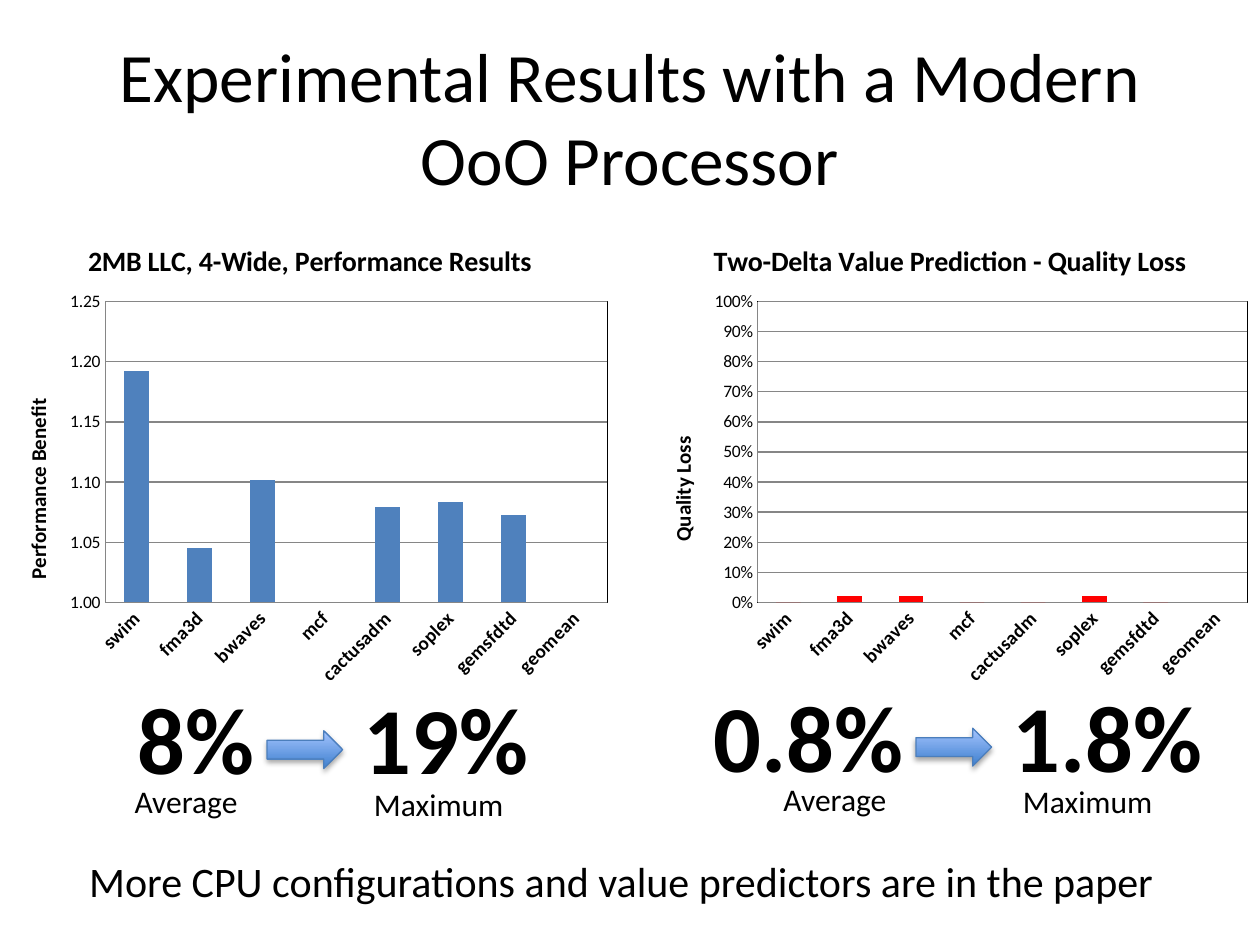
from lxml import etree
from pptx import Presentation
from pptx.chart import data
from pptx.dml.color import RGBColor
from pptx.enum import chart as ch, shapes, text
from pptx.oxml import ns, parse_xml
from pptx.util import Inches, Pt

FONT = "Calibri"
HUES = {"ink": "000000", "blue": "4F81BD", "red": "FF0000", "grid": "868686",
        "deep": "3F80CE", "pale": "A4C4FF", "edge": "4B7EBC"}
CATS = ["swim", "fma3d", "bwaves", "mcf", "cactusadm", "soplex", "gemsfdtd", "geomean"]
GAINS = [1.192, 1.045, 1.102, 1, 1.079, 1.083, 1.073, None]
LOSSES = [0, 0.02, 0.02, 0, 0, 0.02, 0, None]


def hue(name):
    """Return the named colour."""
    return RGBColor.from_string(HUES[name])


def style(font, size, bold=False):
    """Set face, size, weight and ink of a font."""
    font.name, font.size, font.bold = FONT, Pt(size), bold
    font.color.rgb = hue("ink")


def place(shape, *box):
    """Move and size a shape in inches."""
    shape.left, shape.top, shape.width, shape.height = map(Inches, box)


def add_text(home, words, box, size, bold=False, align=text.PP_ALIGN.LEFT, wrap=False):
    """Add a one-paragraph text box."""
    frame = home.add_textbox(*map(Inches, box)).text_frame
    frame.word_wrap = wrap
    para = frame.paragraphs[0]
    para.text, para.alignment = words, align
    style(para.font, size, bold)


def add_arrow(home, left, top):
    """Add a shaded right arrow with a soft shadow."""
    arrow = home.add_shape(shapes.MSO_SHAPE.RIGHT_ARROW, *map(Inches, (left, top, 0.6, 0.3)))
    arrow.fill.gradient()
    arrow.fill.gradient_angle = 90
    for stop, name, spot in zip(arrow.fill.gradient_stops, ("deep", "pale"), (0, 1)):
        stop.color.rgb, stop.position = hue(name), spot
    arrow.line.color.rgb, arrow.line.width = hue("edge"), Pt(0.75)
    arrow.shadow.inherit = False
    glow = arrow.element.spPr.find(ns.qn("a:effectLst"))
    glow.append(parse_xml(
        f'<a:outerShdw {ns.nsdecls("a")} blurRad="{Pt(3.1)}" dist="{Pt(1.8)}" dir="5400000" '
        'rotWithShape="0"><a:srgbClr val="000000"><a:alpha val="35000"/></a:srgbClr></a:outerShdw>'))


def add_range(slide, low, high, left, top, width):
    """Add a group that leads from the average to the maximum."""
    home = slide.shapes.add_group_shape().shapes
    mid = left + width
    add_text(home, low, (left, top, width, 1.01), 54, True, text.PP_ALIGN.RIGHT, True)
    add_text(home, high, (mid + 0.67, top, 1.76, 1.01), 54, True, wrap=True)
    add_text(home, "Average", (mid - 1.15, top + 0.81, 1.04, 0.4), 18)
    add_text(home, "Maximum", (mid + 0.75, top + 0.83, 1.24, 0.4), 18)
    add_arrow(home, mid, top + 0.45)


def add_title(owner, words, size):
    """Give a chart or an axis a bold title."""
    owner.has_title = True
    frame = (owner.chart_title if hasattr(owner, "chart_title") else owner.axis_title).text_frame
    frame.text = words
    style(frame.paragraphs[0].font, size, True)


def set_plot(chart, left, width):
    """Fix the inner plot box by shares of the chart and outline it."""
    area = chart.element.find(".//" + ns.qn("c:plotArea"))
    for old in area.findall(ns.qn("c:layout")):
        area.remove(old)
    layout = etree.Element(ns.qn("c:layout"))
    manual = etree.SubElement(layout, ns.qn("c:manualLayout"))
    rules = {"layoutTarget": "inner", "xMode": "edge", "yMode": "edge",
             "x": left, "y": 0.17, "w": width, "h": 0.63}
    for tag, val in rules.items():
        etree.SubElement(manual, ns.qn("c:" + tag)).set("val", str(val))
    area.insert(0, layout)
    area.append(parse_xml(
        f'<c:spPr {ns.nsdecls("c", "a")}><a:noFill/><a:ln w="{Pt(0.75)}"><a:solidFill>'
        f'<a:srgbClr val="{HUES["ink"]}"/></a:solidFill></a:ln></c:spPr>'))


def add_bars(slide, left, title, label, vals, name, form, scale, plot):
    """Add a column chart of one result per benchmark."""
    info = data.CategoryChartData()
    info.categories = CATS
    info.add_series("Series 1", vals)
    chart = slide.shapes.add_chart(ch.XL_CHART_TYPE.COLUMN_CLUSTERED,
                                   *map(Inches, (left, 1.75, 4.92, 3.79)), info).chart
    style(chart.font, 10)
    chart.has_legend = False
    add_title(chart, title, 16)
    bars = chart.plots[0]
    bars.gap_width, bars.vary_by_categories = 150, False
    fill = bars.series[0].format.fill
    fill.solid()
    fill.fore_color.rgb = hue(name)
    cat, val = chart.category_axis, chart.value_axis
    for axis in (cat, val):
        axis.major_tick_mark = axis.minor_tick_mark = ch.XL_TICK_MARK.NONE
        axis.format.line.color.rgb = hue("grid")
    style(cat.tick_labels.font, 11, True)
    steps = "/".join(map(ns.qn, ("c:catAx", "c:txPr", "a:bodyPr")))
    chart.element.find(".//" + steps).set("rot", "-2700000")
    val.minimum_scale, val.maximum_scale, val.major_unit = scale
    val.tick_labels.number_format = form
    val.tick_labels.number_format_is_linked = False
    val.major_gridlines.format.line.color.rgb = hue("grid")
    add_title(val, label, 12)
    set_plot(chart, *plot)


def main():
    """Build the results slide."""
    deck = Presentation()
    deck.slide_width, deck.slide_height = Inches(10), Inches(7.5)
    slide = deck.slides.add_slide(deck.slide_layouts[5])
    title = slide.shapes.title
    place(title, 0.5, 0.3, 9, 1.25)
    title.text_frame.text = "Experimental Results with a Modern OoO Processor"
    title.text_frame.vertical_anchor = text.MSO_ANCHOR.MIDDLE
    para = title.text_frame.paragraphs[0]
    para.alignment = text.PP_ALIGN.CENTER
    style(para.font, 39.6)
    add_range(slide, "8%", "19%", 0.48, 5.35, 1.64)
    add_range(slide, "0.8%", "1.8%", 5.48, 5.33, 1.79)
    add_text(slide.shapes, "More CPU configurations and value predictors are in the paper",
             (0.61, 6.74, 8.77, 0.5), 24)
    add_bars(slide, 5.08, "Two-Delta Value Prediction - Quality Loss", "Quality Loss",
             LOSSES, "red", "0%", (0, 1, 0.1), (0.19, 0.79))
    add_bars(slide, 0, "2MB LLC, 4-Wide, Performance Results", "Performance Benefit",
             GAINS, "blue", "#,##0.00", (1, 1.25, 0.05), (0.17, 0.81))
    deck.save("out.pptx")


if __name__ == "__main__":
    main()
